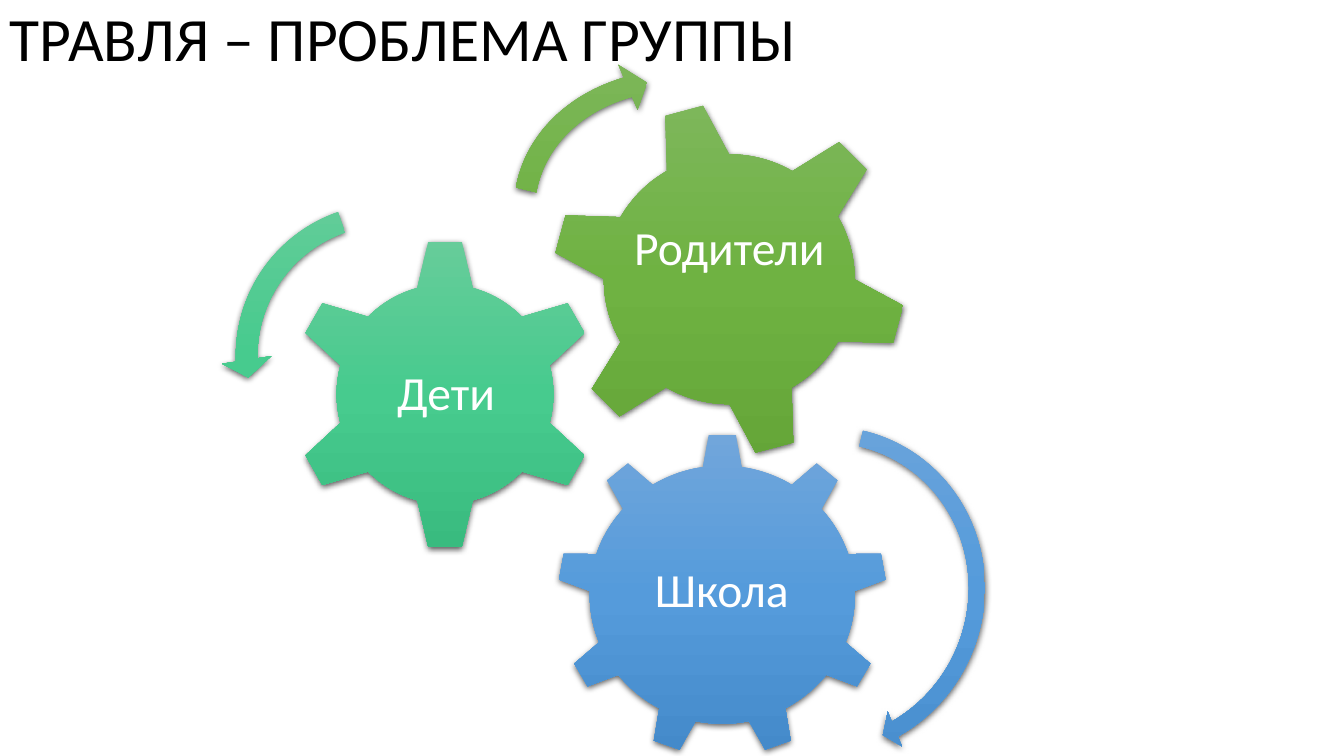
"""Build a slide of three meshing gears that shows bullying as a group problem."""
from dataclasses import dataclass

from pptx import Presentation
from pptx.dml.color import RGBColor
from pptx.enum.shapes import MSO_SHAPE
from pptx.enum.text import MSO_ANCHOR, PP_ALIGN
from pptx.oxml import parse_xml
from pptx.oxml.ns import nsdecls, qn
from pptx.shapes.autoshape import Shape
from pptx.slide import Slide
from pptx.util import Inches, Pt

WIDTH, HEIGHT = Inches(13.33), Inches(7.5)
BLACK = RGBColor(0x00, 0x00, 0x00)
WHITE = RGBColor(0xFF, 0xFF, 0xFF)
BLUE = RGBColor(0x71, 0xA6, 0xDB), RGBColor(0x55, 0x9B, 0xDB), RGBColor(0x44, 0x8A, 0xCA)
MINT = RGBColor(0x67, 0xCC, 0x9A), RGBColor(0x47, 0xCB, 0x8E), RGBColor(0x39, 0xBB, 0x7F)
GREEN = RGBColor(0x81, 0xB8, 0x61), RGBColor(0x6F, 0xB2, 0x42), RGBColor(0x62, 0xA3, 0x36)
TITLE_FORMAT = {"name": "Calibri", "size": Pt(44)}
LABEL_FORMAT = {"name": "Calibri", "size": Pt(34)}
LABEL_INSET = Inches(0.03)


@dataclass(frozen=True)
class Box:
    """Left, top, width and height in percent of the slide."""
    left: float
    top: float
    width: float
    height: float

    def emu(self) -> tuple[int, int, int, int]:
        """Return the box in slide units."""
        return (int(WIDTH * self.left / 100), int(HEIGHT * self.top / 100),
                int(WIDTH * self.width / 100), int(HEIGHT * self.height / 100))


@dataclass(frozen=True)
class Gear:
    """A labelled gear."""
    label: str
    kind: MSO_SHAPE
    box: Box
    label_box: Box
    colors: tuple[RGBColor, ...]
    rotation: float = 0
    lift: float = 0


@dataclass(frozen=True)
class Arrow:
    """A turning arrow: sizes in percent, angles in degrees."""
    kind: MSO_SHAPE
    box: Box
    colors: tuple[RGBColor, ...]
    rotation: float
    thickness: float
    head_angle: float
    end_angle: float
    start_angle: float
    head_width: float


TITLE_BOX = Box(0, 0, 86.25, 11.07)
GEARS = (
    Gear("Школа", MSO_SHAPE.GEAR_9, Box(41.48, 57.33, 24.53, 42.67),
         Box(46.35, 67.33, 14.7, 21.87), BLUE),
    Gear("Дети", MSO_SHAPE.GEAR_6, Box(21.6, 31.47, 23.03, 41.33),
         Box(27.45, 42, 11.48, 20.53), MINT),
    Gear("Родители", MSO_SHAPE.GEAR_6, Box(40.95, 13.33, 26.63, 47.2),
         Box(46.8, 23.73, 14.93, 26.53), GREEN, 345, 0.58),
)
ARROWS = (
    Arrow(MSO_SHAPE.CIRCULAR_ARROW, Box(48.6, 54.93, 25.43, 46.67), BLUE, 20.3,
          4.7, 4.98, 42.43, 263.31, 5.5),
    Arrow(MSO_SHAPE.LEFT_CIRCULAR_ARROW, Box(16.5, 25.07, 24.75, 44), MINT, 3.5,
          6.5, 7.17, 174.82, 247.3, 7.5),
    Arrow(MSO_SHAPE.CIRCULAR_ARROW, Box(36.9, 7.87, 32.18, 46.27), GREEN, 18.3,
          6, 6.57, 221.9, 175.14, 7),
)


def add_part(s: Slide, part: Gear | Arrow) -> Shape:
    """Add a shape with a vertical gradient and a soft shadow."""
    sp = s.shapes.add_shape(part.kind, *part.box.emu())
    sp.rotation = part.rotation
    stops = "".join(f'<a:gs pos="{i * 50000}"><a:srgbClr val="{color}"/></a:gs>'
                    for i, color in enumerate(part.colors))
    sp._element.spPr.append(parse_xml(
        f'<a:gradFill {nsdecls("a")} rotWithShape="0"><a:gsLst>{stops}</a:gsLst>'
        '<a:lin ang="5400000" scaled="0"/></a:gradFill>'))
    sp.line.fill.background()
    sp.shadow.inherit = False
    sp._element.spPr.find(qn("a:effectLst")).append(parse_xml(
        f'<a:outerShdw {nsdecls("a")} blurRad="{Pt(4.5)}" dist="{Pt(1.5)}" dir="5400000" '
        f'algn="ctr" rotWithShape="0"><a:srgbClr val="{BLACK}">'
        '<a:alpha val="63000"/></a:srgbClr></a:outerShdw>'))
    return sp


def add_text(s: Slide, text: str, box: Box, fmt: dict, color: RGBColor,
             align: PP_ALIGN) -> Shape:
    """Add a vertically centred text box."""
    sp = s.shapes.add_textbox(*box.emu())
    tf = sp.text_frame
    tf.word_wrap = True
    tf.vertical_anchor = MSO_ANCHOR.MIDDLE
    p = tf.paragraphs[0]
    p.alignment = align
    p.line_spacing = 0.9
    r = p.add_run()
    r.text = text
    for name, value in fmt.items():
        setattr(r.font, name, value)
    r.font.color.rgb = color
    return sp


def add_gear(s: Slide, gear: Gear) -> None:
    """Add a gear and its label."""
    add_part(s, gear)
    tf = add_text(s, gear.label, gear.label_box, LABEL_FORMAT, WHITE,
                  PP_ALIGN.CENTER).text_frame
    for side in ("left", "top", "right", "bottom"):
        setattr(tf, f"margin_{side}", LABEL_INSET)
    tf.margin_bottom = LABEL_INSET + Inches(gear.lift)


def add_arrow(s: Slide, arrow: Arrow) -> None:
    """Add a turning arrow."""
    sp = add_part(s, arrow)
    angles = (arrow.head_angle, arrow.end_angle, arrow.start_angle)
    values = (arrow.thickness / 100, *(a * 0.6 for a in angles), arrow.head_width / 100)
    for i, value in enumerate(values):
        sp.adjustments[i] = value


def main() -> None:
    """Build and save the slide."""
    prs = Presentation()
    prs.slide_width, prs.slide_height = WIDTH, HEIGHT
    s = prs.slides.add_slide(prs.slide_layouts[6])
    add_text(s, "ТРАВЛЯ – ПРОБЛЕМА ГРУППЫ", TITLE_BOX, TITLE_FORMAT, BLACK, PP_ALIGN.LEFT)
    for gear in GEARS:
        add_gear(s, gear)
    for arrow in ARROWS:
        add_arrow(s, arrow)
    prs.save("out.pptx")


if __name__ == "__main__":
    main()
